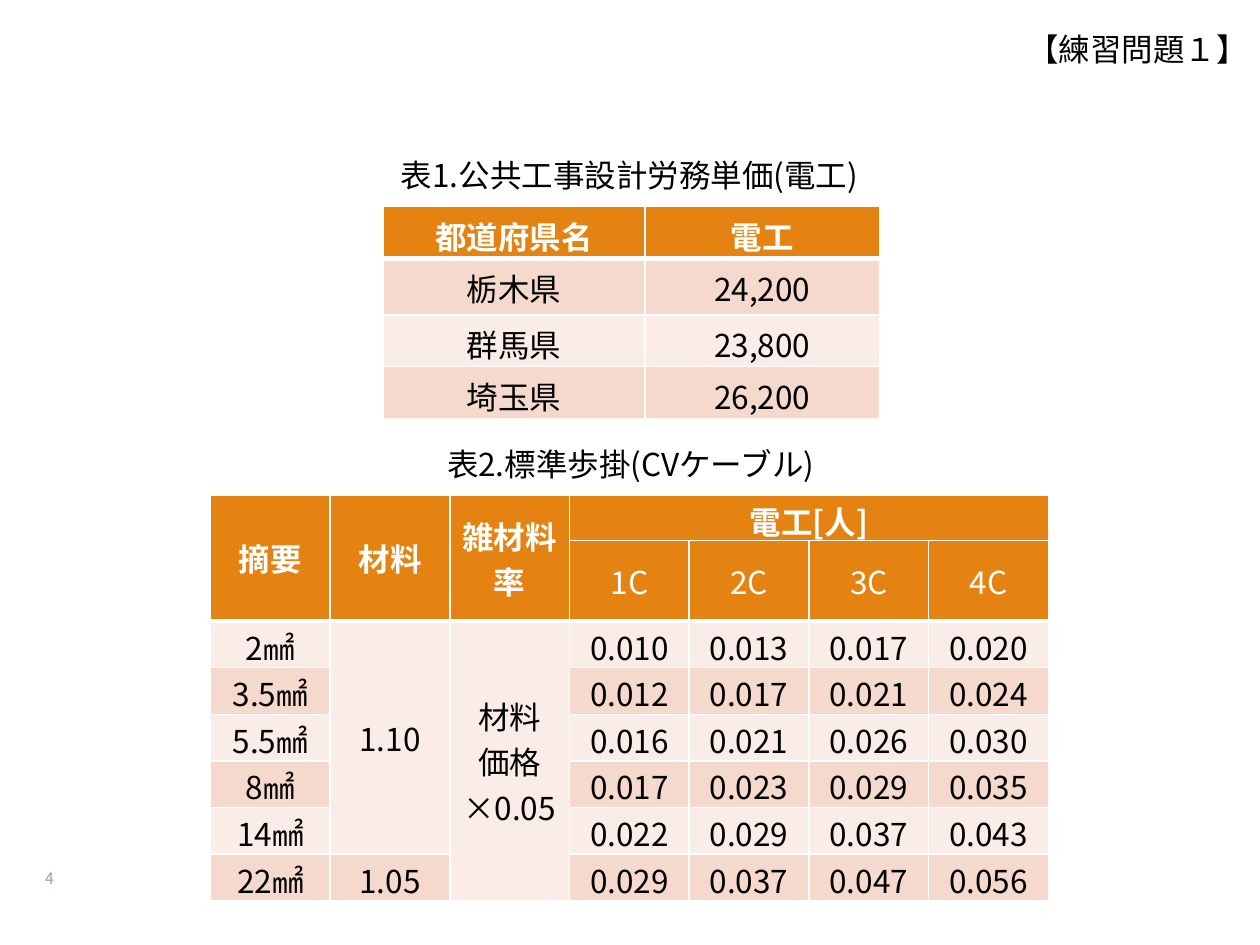
from pptx import Presentation
from pptx.dml.color import RGBColor
from pptx.enum.text import MSO_ANCHOR, PP_ALIGN
from pptx.oxml.ns import qn
from pptx.util import Inches, Pt
from lxml import etree

LEFT, CENTER, RIGHT = PP_ALIGN.LEFT, PP_ALIGN.CENTER, PP_ALIGN.RIGHT
TOP, MIDDLE = MSO_ANCHOR.TOP, MSO_ANCHOR.MIDDLE
FONT = "Noto Sans CJK JP"
BLACK = RGBColor(0x00, 0x00, 0x00)
WHITE = RGBColor(0xFF, 0xFF, 0xFF)
ORANGE = RGBColor(0xE4, 0x83, 0x12)
PINK = RGBColor(0xF5, 0xD9, 0xCC)
PALE = RGBColor(0xFA, 0xED, 0xE7)
GREEN = RGBColor(0x9A, 0xA8, 0x88)

# Content: text, left, top, width, height, alignment, anchor, size, colour
LABELS = [
    ("4", 0.26, 6.86, 0.59, 0.22, LEFT, MIDDLE, 9, GREEN),
    ("表1.公共工事設計労務単価(電工)", 2.6, 1.19, 4.79, 0.4, CENTER, TOP, 18, BLACK),
    ("表2.標準歩掛(CVケーブル)", 2.78, 3.48, 4.45, 0.4, CENTER, TOP, 18, BLACK),
    ("【練習問題１】", 8.03, 0.19, 1.97, 0.4, RIGHT, TOP, 18, BLACK),
]
WAGES = [
    ("都道府県名", "電工"),
    ("栃木県", "24,200"),
    ("群馬県", "23,800"),
    ("埼玉県", "26,200"),
]
# None marks a cell covered by a merged one
LABOUR = [
    ("摘要", "材料", "雑材料率", "電工[人]", None, None, None),
    (None, None, None, "1C", "2C", "3C", "4C"),
    ("2㎟", "1.10", "材料\n価格×0.05", "0.010", "0.013", "0.017", "0.020"),
    ("3.5㎟", None, None, "0.012", "0.017", "0.021", "0.024"),
    ("5.5㎟", None, None, "0.016", "0.021", "0.026", "0.030"),
    ("8㎟", None, None, "0.017", "0.023", "0.029", "0.035"),
    ("14㎟", None, None, "0.022", "0.029", "0.037", "0.043"),
    ("22㎟", "1.05", None, "0.029", "0.037", "0.047", "0.056"),
]
# First and last (row, column) of each merged cell
LABOUR_MERGES = [((0, column), (1, column)) for column in range(3)] + [
    ((0, 3), (0, 6)), ((2, 1), (6, 1)), ((2, 2), (7, 2))]


def add_text(paragraph, text, alignment, size, color, bold=False):
    paragraph.alignment = alignment
    run = paragraph.add_run()
    run.text = text
    font = run.font
    font.name, font.size, font.bold = FONT, Pt(size), bold
    font.color.rgb = color
    east_asian = etree.SubElement(run._r.get_or_add_rPr(), qn("a:ea"))
    east_asian.set("typeface", FONT)


def add_label(slide, text, left, top, width, height, alignment, anchor, size, color):
    box = slide.shapes.add_textbox(Inches(left), Inches(top), Inches(width), Inches(height))
    frame = box.text_frame
    frame.word_wrap = True
    frame.vertical_anchor = anchor
    add_text(frame.paragraphs[0], text, alignment, size, color)


def set_borders(cell, widths):
    properties = cell._tc.get_or_add_tcPr()
    for index, (side, width) in enumerate(widths.items()):
        line = etree.Element(qn(f"a:ln{side}"), w=str(Pt(width)))
        fill = etree.SubElement(line, qn("a:solidFill"))
        etree.SubElement(fill, qn("a:srgbClr"), val=str(WHITE))
        properties.insert(index, line)


def add_grid(slide, rows, left, top, widths, heights, header_rows, stripes,
             margin=0.05, merges=(), middle=()):
    frame = slide.shapes.add_table(len(rows), len(widths), Inches(left), Inches(top),
                                   Inches(sum(widths)), Inches(sum(heights)))
    table = frame.table
    for column, width in zip(table.columns, widths):
        column.width = Inches(width)
    for row, height in zip(table.rows, heights):
        row.height = Inches(height)
    for first, last in merges:
        table.cell(*first).merge(table.cell(*last))

    for r, values in enumerate(rows):
        header = r < header_rows
        for c, value in enumerate(values):
            cell = table.cell(r, c)
            cell.margin_top = cell.margin_bottom = Inches(margin)
            cell.fill.solid()
            cell.fill.fore_color.rgb = ORANGE if header else stripes[(r - header_rows) % 2]
            bottom = r + (cell.span_height if cell.is_merge_origin else 1)
            set_borders(cell, {"L": 1, "R": 1, "T": 3 if r == header_rows else 1,
                               "B": 3 if bottom == header_rows else 1})
            if value is None:
                continue
            cell.vertical_anchor = MIDDLE if (r, c) in middle else TOP
            for i, line in enumerate(value.split("\n")):
                text_frame = cell.text_frame
                paragraph = text_frame.add_paragraph() if i else text_frame.paragraphs[0]
                add_text(paragraph, line, CENTER, 18, WHITE if header else BLACK,
                         bold=r == 0)


presentation = Presentation()
presentation.slide_width, presentation.slide_height = Inches(10), Inches(7.5)
slide = presentation.slides.add_slide(presentation.slide_layouts[6])

# Page number, captions and heading
for label in LABELS:
    add_label(slide, *label)

# Table 1: wages by prefecture
add_grid(slide, WAGES, 3.04, 1.64, [2.08, 1.86], [0.41, 0.45, 0.41, 0.41], 1, (PINK, PALE))

# Table 2: standard labour per cable size
middle_cells = [(r, c) for r in range(8) for c in (0, 1, 2) if r < 2 or c] + [
    (1, c) for c in range(3, 7)]
add_grid(slide, LABOUR, 1.67, 3.93, [0.95] * 7, [0.36] + [0.37] * 7, 2, (PALE, PINK),
         margin=0.02, merges=LABOUR_MERGES, middle=middle_cells)

presentation.save("out.pptx")
